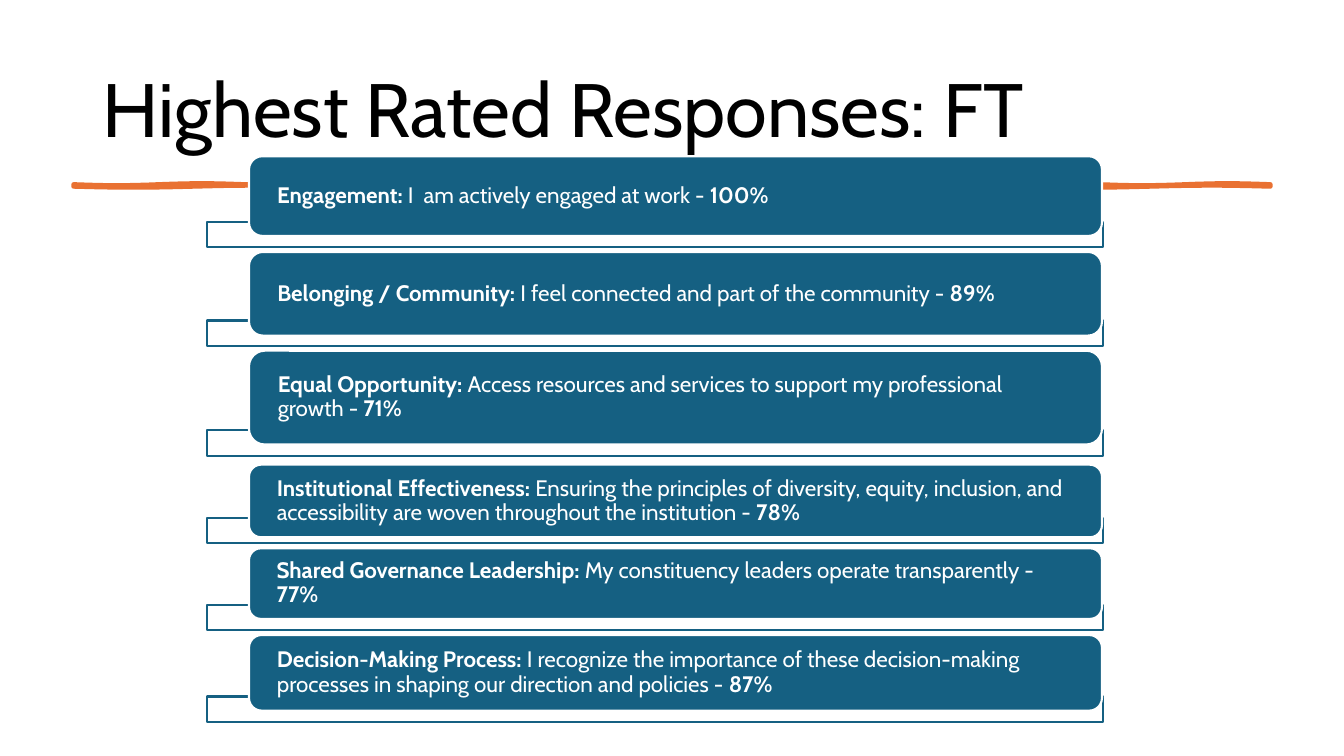
import math
from dataclasses import dataclass

import pptx
import pptx.dml.color
import pptx.enum.shapes
import pptx.enum.text
import pptx.oxml
import pptx.oxml.ns
import pptx.util
from pptx.util import Inches


@dataclass(frozen=True)
class Theme:
    """Colours, font and type sizes of the slide."""
    black = pptx.dml.color.RGBColor.from_string("000000")
    white = pptx.dml.color.RGBColor.from_string("FFFFFF")
    teal = pptx.dml.color.RGBColor.from_string("156082")
    orange = pptx.dml.color.RGBColor.from_string("E97132")
    font = "Cabin"
    title_size = pptx.util.Pt(54)
    response_size = pptx.util.Pt(16)
    outline = pptx.util.Pt(1.5)
    stroke = pptx.util.Pt(3.25)


THEME = Theme()
SHAPES = pptx.enum.shapes.MSO_SHAPE

RESPONSES = [
    (1.55, 0.79, 2.2, "Engagement: ", "I  am actively engaged at work - ", "100%"),
    (2.5, 0.83, 3.18, "Belonging / Community: ",
     "I feel connected and part of the community - ", "89%"),
    (3.48, 0.93, 4.27, "Equal Opportunity: ",
     "Access resources and services to support my professional growth - ", "71%"),
    (4.61, 0.72, 5.14, "Institutional Effectiveness: ",
     "Ensuring the principles of diversity, equity, inclusion, and "
     "accessibility are woven throughout the institution - ", "78%"),
    (5.44, 0.7, 6.0, "Shared Governance Leadership: ",
     "My constituency leaders operate transparently - ", "77%"),
    (6.3, 0.75, 6.91, "Decision-Making Process: ",
     "I recognize the importance of these decision-making processes in "
     "shaping our direction and policies - ", "87%"),
]


def style(shape, fill, line, width):
    """Give a shape a flat fill and outline without a shadow."""
    shape.shadow.inherit = False
    shape.fill.solid()
    shape.fill.fore_color.rgb = fill
    shape.line.color.rgb = line
    shape.line.width = width


def format_paragraph(paragraph, size, color):
    """Set the type and spacing of a left-aligned paragraph."""
    paragraph.alignment = pptx.enum.text.PP_ALIGN.LEFT
    paragraph.line_spacing = 0.9
    paragraph.font.name = THEME.font
    paragraph.font.size = size
    paragraph.font.color.rgb = color


def add_title(slide, left, top, width, height):
    """Place the heading in the title placeholder."""
    title = slide.shapes.title
    title.left, title.top = Inches(left), Inches(top)
    title.width, title.height = Inches(width), Inches(height)
    frame = title.text_frame
    frame.text = "Highest Rated Responses: FT"
    frame.auto_size = pptx.enum.text.MSO_AUTO_SIZE.NONE
    frame.vertical_anchor = pptx.enum.text.MSO_ANCHOR.MIDDLE
    format_paragraph(frame.paragraphs[0], THEME.title_size, THEME.black)


def add_brush_rule(slide, left, top, width, height):
    """Draw a hand-drawn rule as a thin band with wavy edges."""
    steps = 96

    def edge(index, base, waves):
        sway = 0.01 * math.sin(2 * math.pi * waves * index / steps)
        return Inches(left + width * index / steps), Inches(base + sway)

    upper = [edge(i, top, 7) for i in range(steps + 1)]
    lower = [edge(i, top + height, 5) for i in range(steps, -1, -1)]
    builder = slide.shapes.build_freeform(*upper[0])
    builder.add_line_segments(upper[1:] + lower, close=True)
    style(builder.convert_to_shape(), THEME.orange, THEME.orange, THEME.stroke)


def add_response(slide, left, top, width, height, bracket_top, topic, statement, share):
    """Place a response card over its outlined bracket."""
    indent = 0.42
    bracket = slide.shapes.add_shape(
        SHAPES.RECTANGLE, Inches(left), Inches(bracket_top), Inches(width), Inches(0.25))
    style(bracket, THEME.white, THEME.teal, THEME.outline)
    tint = bracket.fill._xPr.find(".//" + pptx.oxml.ns.qn("a:srgbClr"))
    tint.append(pptx.oxml.parse_xml(
        f'<a:alpha {pptx.oxml.ns.nsdecls("a")} val="90000"/>'))

    card = slide.shapes.add_shape(
        SHAPES.ROUNDED_RECTANGLE, Inches(left + indent), Inches(top),
        Inches(width - indent - 0.01), Inches(height))
    style(card, THEME.teal, THEME.white, THEME.outline)
    frame = card.text_frame
    frame.word_wrap = True
    frame.vertical_anchor = pptx.enum.text.MSO_ANCHOR.MIDDLE
    frame.margin_left = frame.margin_right = Inches(0.24)
    frame.margin_top = frame.margin_bottom = 0
    paragraph = frame.paragraphs[0]
    format_paragraph(paragraph, THEME.response_size, THEME.white)
    for words, bold in ((topic, True), (statement, False), (share, True)):
        run = paragraph.add_run()
        run.text = words
        run.font.bold = bold


def add_responses(slide, left, width):
    """Stack the response cards in one column."""
    for top, height, bracket_top, *wording in RESPONSES:
        add_response(slide, left, top, width, height, bracket_top, *wording)


def main():
    """Build the slide and save it."""
    deck = pptx.Presentation()
    deck.slide_width, deck.slide_height = Inches(13.33), Inches(7.5)
    slide = deck.slides.add_slide(deck.slide_layouts.get_by_name("Title Only"))
    add_title(slide, 0.92, 0.4, 11.5, 1.45)
    add_brush_rule(slide, 0.73, 1.83, 11.87, 0.02)
    add_responses(slide, 2.05, 8.89)
    deck.save("out.pptx")


if __name__ == "__main__":
    main()
